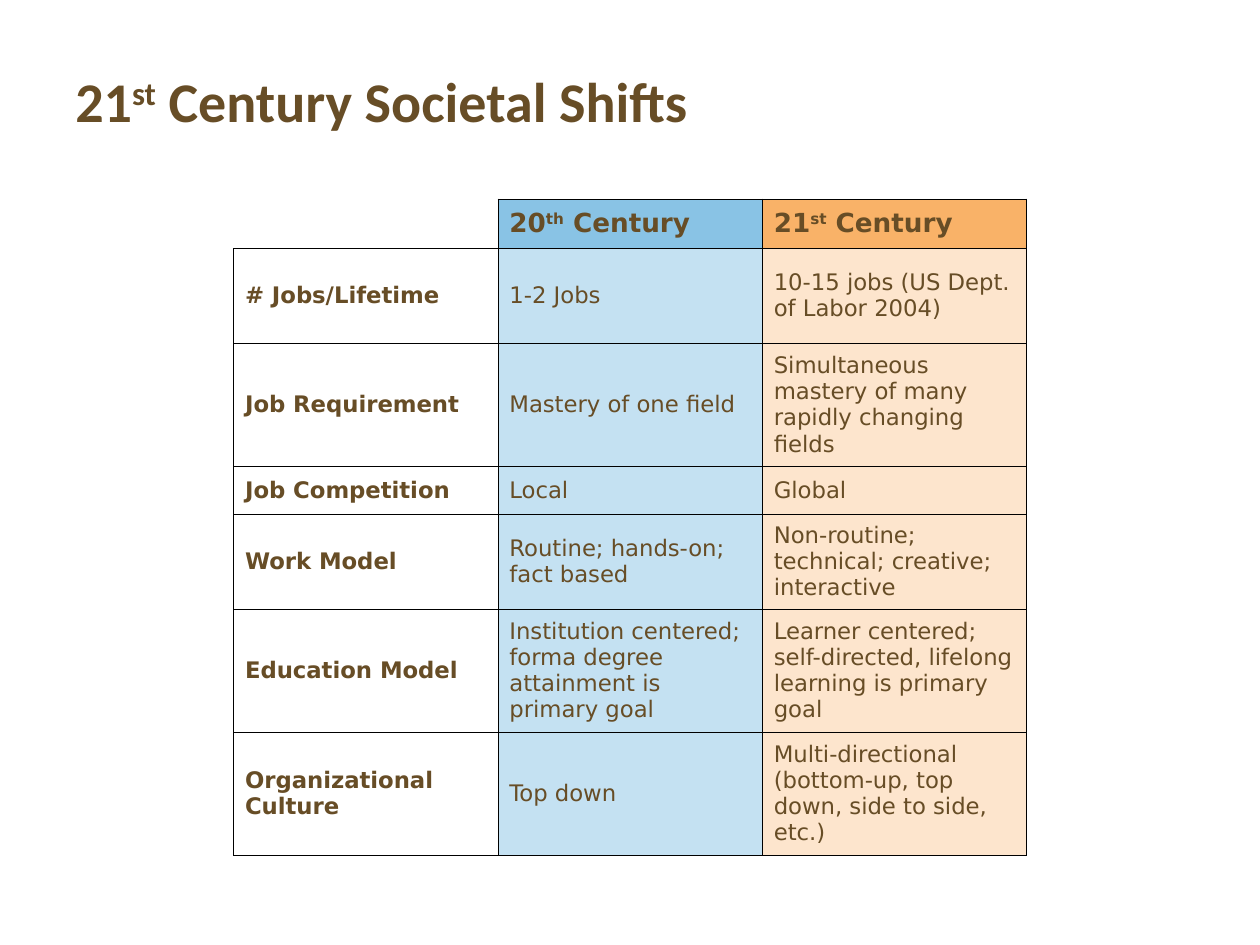
from dataclasses import dataclass

from lxml.etree import SubElement
from pptx import Presentation
from pptx.dml.color import RGBColor
from pptx.enum.text import MSO_ANCHOR
from pptx.oxml.ns import qn
from pptx.util import Cm, Pt


@dataclass(frozen=True)
class Theme:
    text: str = "674D26"
    border: str = "000000"
    headers: tuple = ("FFFFFF", "89C3E5", "F9B268")
    columns: tuple = ("FFFFFF", "C4E1F2", "FDE5CD")
    title_font: str = "Calibri"
    table_font: str = "DejaVu Sans"
    title_size: int = 32
    header_size: int = 15
    body_size: int = 13


theme = Theme()


def write_runs(text_frame, text, font_name, size, bold):
    """Fill the first paragraph; text between carets is superscript."""
    for index, part in enumerate(text.split("^")):
        run = text_frame.paragraphs[0].add_run()
        run.text = part
        run.font.name = font_name
        run.font.size = Pt(size)
        run.font.bold = bold
        run.font.color.rgb = RGBColor.from_string(theme.text)
        if index % 2:
            run._r.get_or_add_rPr().set("baseline", "30000")


def set_border(cell, side, width):
    """Draw one cell edge, or hide it when the width is zero."""
    line = SubElement(cell._tc.get_or_add_tcPr(), qn(f"a:ln{side}"), w=str(Pt(width)))
    if width:
        fill = SubElement(line, qn("a:solidFill"))
        SubElement(fill, qn("a:srgbClr"), val=theme.border)
    else:
        SubElement(line, qn("a:noFill"))


presentation = Presentation()
presentation.slide_width = Cm(25.4)
presentation.slide_height = Cm(19.05)
slide = presentation.slides.add_slide(presentation.slide_layouts[6])

title = slide.shapes.add_textbox(Cm(1.27), Cm(0.43), Cm(22.86), Cm(3.18))
title.text_frame.word_wrap = True
title.text_frame.vertical_anchor = MSO_ANCHOR.MIDDLE
write_runs(title.text_frame, "21^st^ Century Societal Shifts",
           theme.title_font, theme.title_size, True)

rows = [
    ("", "20^th^ Century", "21^st^ Century"),
    ("# Jobs/Lifetime", "1-2 Jobs", "10-15 jobs (US Dept. of Labor 2004)"),
    ("Job Requirement", "Mastery of one field",
     "Simultaneous mastery of many rapidly changing fields"),
    ("Job Competition", "Local", "Global"),
    ("Work Model", "Routine; hands-on; fact based",
     "Non-routine; technical; creative; interactive"),
    ("Education Model",
     "Institution centered; forma degree attainment is primary goal",
     "Learner centered; self-directed, lifelong learning is primary goal"),
    ("Organizational Culture", "Top down",
     "Multi-directional (bottom-up, top down, side to side, etc.)"),
]
row_heights = [1, 1.91, 2.48, 0.97, 1.91, 2.48, 2.48]
column_width = 5.33

table = slide.shapes.add_table(
    len(rows), 3, Cm(4.71), Cm(4.01), Cm(3 * column_width), Cm(sum(row_heights))
).table
table.first_row = False
table.horz_banding = False
for column in table.columns:
    column.width = Cm(column_width)

for row_index, texts in enumerate(rows):
    table.rows[row_index].height = Cm(row_heights[row_index])
    is_header = row_index == 0
    fills = theme.headers if is_header else theme.columns
    size = theme.header_size if is_header else theme.body_size
    for column_index, text in enumerate(texts):
        cell = table.cell(row_index, column_index)
        is_corner = is_header and column_index == 0
        for side in "LRTB":
            set_border(cell, side, 0 if is_corner and side in "LT" else 0.5)
        cell.fill.solid()
        cell.fill.fore_color.rgb = RGBColor.from_string(fills[column_index])
        cell.vertical_anchor = MSO_ANCHOR.MIDDLE
        cell.margin_left = cell.margin_right = Cm(0.23)
        if is_corner:
            cell.margin_top = cell.margin_bottom = 0
        else:
            write_runs(cell.text_frame, text, theme.table_font, size,
                       is_header or column_index == 0)

presentation.save("out.pptx")
